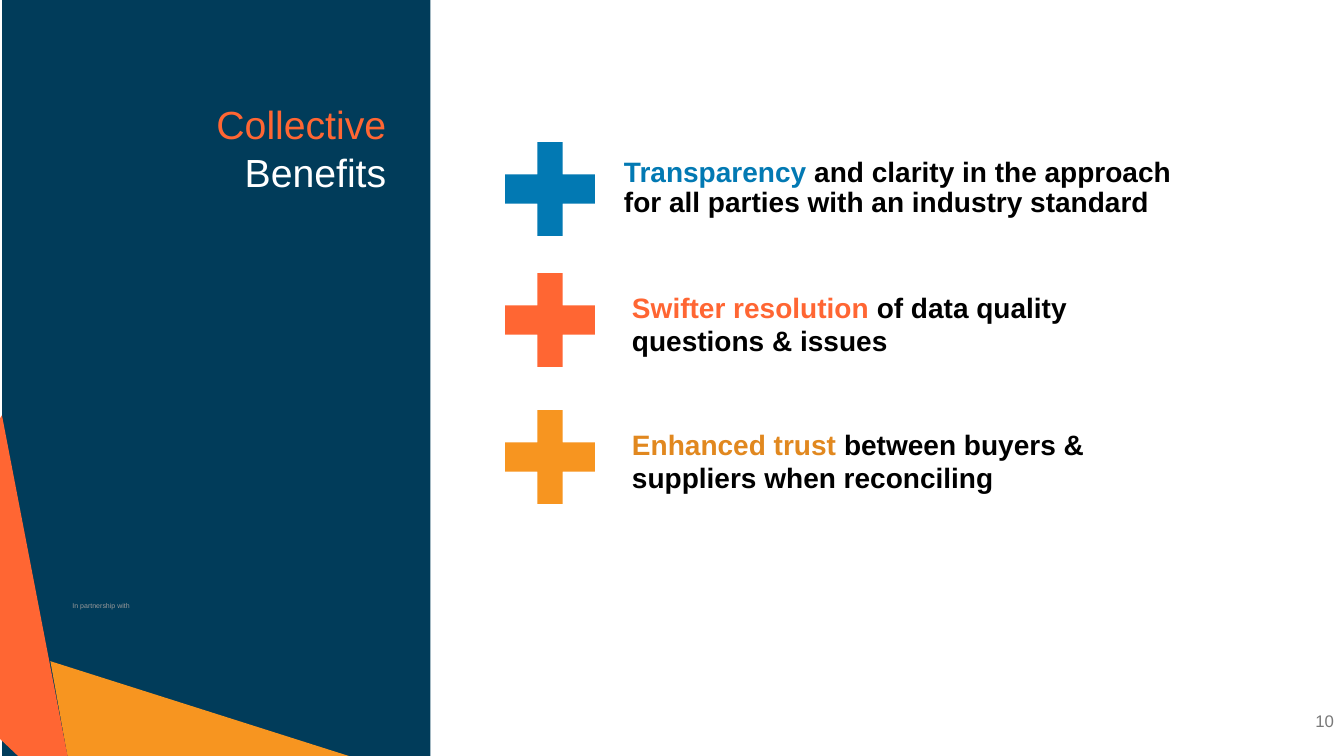
"""Build the Collective Benefits slide."""
from dataclasses import dataclass

from pptx import Presentation
from pptx.dml.color import RGBColor as RGB
from pptx.enum.shapes import MSO_SHAPE as SHAPE
from pptx.enum.text import MSO_ANCHOR as ANCHOR, PP_ALIGN as ALIGN
from pptx.shapes.autoshape import Shape
from pptx.slide import Slide
from pptx.util import Pt

PX = 9144


@dataclass(frozen=True)
class Theme:
    font: str = "Arial"
    navy: str = "013C5A"
    coral: str = "FF6633"
    amber: str = "F79520"
    ochre: str = "E1881F"
    blue: str = "0279B3"
    white: str = "FFFFFF"
    black: str = "000000"
    pale: str = "999999"
    gray: str = "797979"
    title: int = 28
    body: int = 20
    page: int = 12
    small: int = 5


@dataclass(frozen=True)
class Box:
    x: int
    y: int
    w: int
    h: int

    def emu(self) -> tuple[int, ...]:
        return tuple(v * PX for v in (self.x, self.y, self.w, self.h))


@dataclass(frozen=True)
class Run:
    text: str
    color: str


@dataclass(frozen=True)
class Label:
    box: Box
    runs: tuple[Run, ...]
    size: int
    bold: bool = False
    align: ALIGN = ALIGN.LEFT
    anchor: ANCHOR = ANCHOR.TOP
    inset: bool = True
    space: float = 1.0


@dataclass(frozen=True)
class Wedge:
    color: str
    points: tuple[tuple[int, int], ...]


@dataclass(frozen=True)
class Gain:
    top: int
    fill: str
    box: Box
    lead: Run
    rest: str
    space: float = 1.0


T = Theme()

WEDGES = (
    Wedge(T.amber, ((50, 656), (346, 750), (67, 750))),
    Wedge(T.coral, ((0, 415), (2, 412), (67, 750), (18, 750), (0, 733))),
)

LABELS = (
    Label(Box(62, 592, 105, 19), (Run("In partnership with", T.pale),), T.small),
    Label(Box(121, 100, 262, 337),
          (Run("Collective", T.coral), Run(" Benefits", T.white)),
          T.title, align=ALIGN.RIGHT, inset=False),
    Label(Box(1033, 695, 300, 40), (Run("10", T.gray),), T.page,
          align=ALIGN.RIGHT, anchor=ANCHOR.MIDDLE),
)

GAINS = (
    Gain(141, T.blue, Box(609, 152, 574, 71), Run("Transparency ", T.blue),
         "and clarity in the approach for all parties with an industry standard", 0.9),
    Gain(271, T.coral, Box(617, 283, 586, 77), Run("Swifter resolution ", T.coral),
         "of data quality questions & issues"),
    Gain(407, T.amber, Box(617, 419, 486, 77), Run("Enhanced trust ", T.ochre),
         "between buyers & suppliers when reconciling"),
)


def paint(shape: Shape, color: str) -> None:
    """Give a shape a flat fill with no line or shadow."""
    shape.shadow.inherit = False
    shape.fill.solid()
    shape.fill.fore_color.rgb = RGB.from_string(color)
    shape.line.fill.background()


def block(slide: Slide, kind: SHAPE, box: Box, color: str) -> Shape:
    """Draw a flat preset shape."""
    shape = slide.shapes.add_shape(kind, *box.emu())
    paint(shape, color)
    return shape


def wedge(slide: Slide, item: Wedge) -> None:
    """Draw a flat polygon."""
    first, *rest = item.points
    pen = slide.shapes.build_freeform(*first, scale=PX)
    pen.add_line_segments(rest, close=True)
    paint(pen.convert_to_shape(), item.color)


def write(slide: Slide, item: Label) -> None:
    """Draw a text box with its coloured runs."""
    frame = slide.shapes.add_textbox(*item.box.emu()).text_frame
    frame.word_wrap = True
    frame.vertical_anchor = item.anchor
    if not item.inset:
        for side in ("left", "top", "right", "bottom"):
            setattr(frame, f"margin_{side}", 0)
    para = frame.paragraphs[0]
    para.alignment = item.align
    para.line_spacing = item.space
    style = {"name": T.font, "size": Pt(item.size), "bold": item.bold}
    for part in item.runs:
        run = para.add_run()
        run.text = part.text
        for key, value in style.items():
            setattr(run.font, key, value)
        run.font.color.rgb = RGB.from_string(part.color)


def gain(slide: Slide, item: Gain) -> None:
    """Draw a plus sign and the benefit beside it."""
    plus = block(slide, SHAPE.CROSS, Box(501, item.top, 89, 93), item.fill)
    plus.adjustments[0] = 0.36
    runs = (item.lead, Run(item.rest, T.black))
    write(slide, Label(item.box, runs, T.body, bold=True, space=item.space))


def main() -> None:
    """Build and save the deck."""
    deck = Presentation()
    deck.slide_width, deck.slide_height = 1333 * PX, 750 * PX
    slide = deck.slides.add_slide(deck.slide_layouts[6])
    block(slide, SHAPE.RECTANGLE, Box(2, 0, 425, 750), T.navy)
    for item in WEDGES:
        wedge(slide, item)
    for item in LABELS:
        write(slide, item)
    for item in GAINS:
        gain(slide, item)
    deck.save("out.pptx")


if __name__ == "__main__":
    main()
